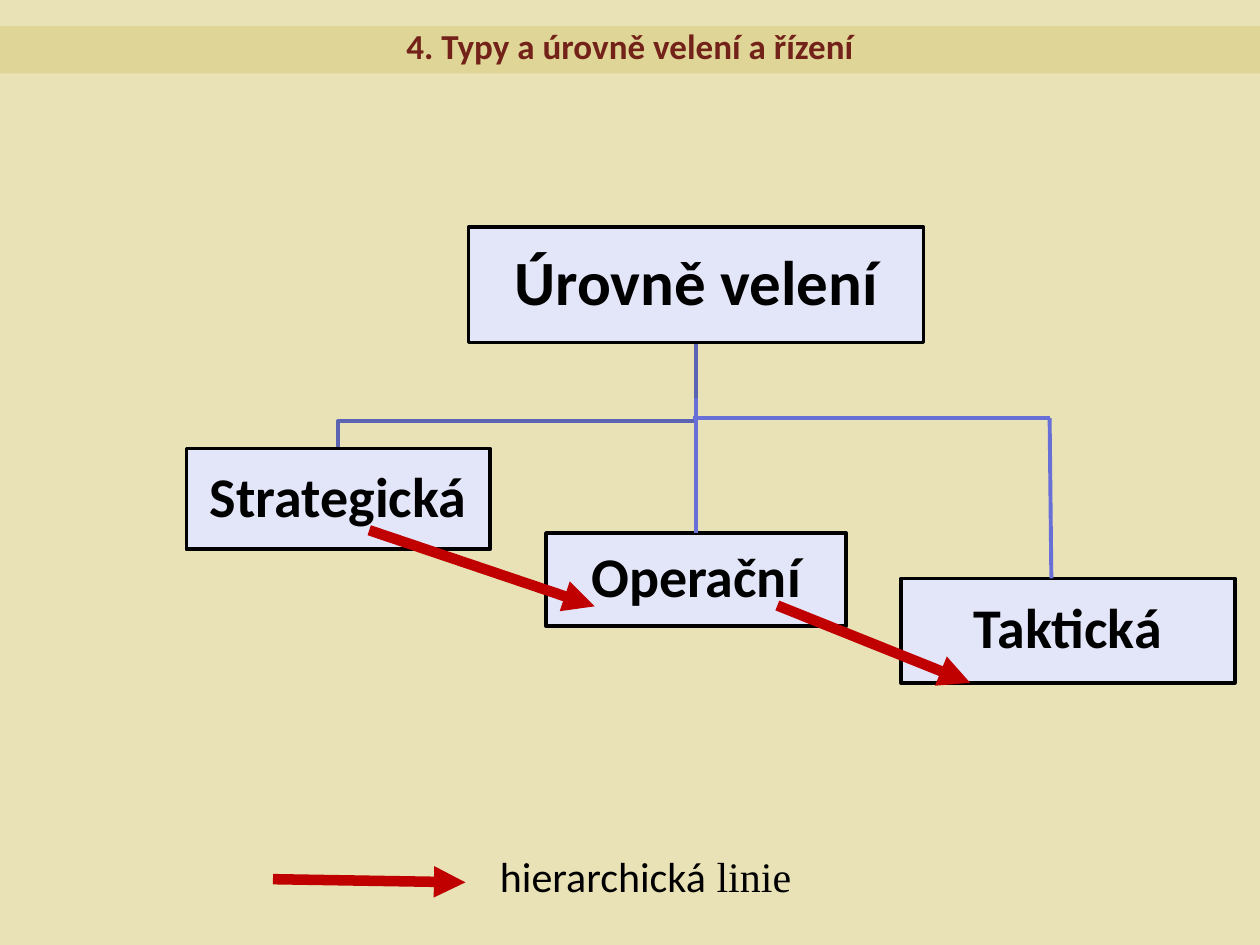
from lxml import etree
from pptx import Presentation
from pptx.dml.color import RGBColor
from pptx.enum.shapes import MSO_CONNECTOR, MSO_SHAPE
from pptx.enum.text import MSO_ANCHOR, PP_ALIGN
from pptx.oxml.ns import qn
from pptx.util import Pt

RECT = MSO_SHAPE.RECTANGLE
LINE = MSO_CONNECTOR.STRAIGHT
MID = MSO_ANCHOR.MIDDLE
CENTER = PP_ALIGN.CENTER

SAND = RGBColor(0xE9, 0xE2, 0xB6)
BAND = RGBColor(0xDF, 0xD5, 0x96)
WINE = RGBColor(0x72, 0x22, 0x19)
PALE = RGBColor(0xE3, 0xE5, 0xF9)
BLACK = RGBColor(0, 0, 0)
SLATE = RGBColor(0x5B, 0x64, 0xB3)
BLUE = RGBColor(0x68, 0x6F, 0xD7)
RED = RGBColor(0xC0, 0, 0)

prs = Presentation()
prs.slide_width, prs.slide_height = Pt(720), Pt(540)
slide = prs.slides.add_slide(prs.slide_layouts[6])
slide.background.fill.solid()
slide.background.fill.fore_color.rgb = SAND
shapes = slide.shapes


def add_box(text, x, y, w, h, fill, size, color, spacing):
    box = shapes.add_shape(RECT, Pt(x), Pt(y), Pt(w), Pt(h))
    box.shadow.inherit = False
    box.fill.solid()
    box.fill.fore_color.rgb = fill
    box.line.fill.background()
    frame = box.text_frame
    frame.text = text
    frame.word_wrap = True
    frame.vertical_anchor = MID
    para = frame.paragraphs[0]
    para.alignment = CENTER
    para.line_spacing = spacing
    font = para.runs[0].font
    font.name, font.size, font.bold = "Calibri", Pt(size), True
    font.color.rgb = color
    return box


def add_line(x1, y1, x2, y2, color, width, arrow=False):
    line = shapes.add_connector(LINE, Pt(x1), Pt(y1), Pt(x2), Pt(y2))
    line.line.color.rgb = color
    line.line.width = Pt(width)
    if arrow:
        etree.SubElement(line.line._get_or_add_ln(), qn("a:tailEnd"), type="triangle")
    etree.SubElement(line._element.spPr, qn("a:effectLst"))
    return line


# Heading band
band = add_box("4. Typy a úrovně velení a řízení", 0, 15, 720, 27, BAND, 20, WINE, 0.8)
band.text_frame.vertical_anchor = MSO_ANCHOR.TOP

# Elbow from the top box to the strategic level
elbow = shapes.build_freeform(Pt(397.8), Pt(195.8))
elbow.add_line_segments(
    [(Pt(397.8), Pt(240.5)), (Pt(193.3), Pt(240.5)), (Pt(193.3), Pt(256.3))], close=False)
bend = elbow.convert_to_shape()
bend.shadow.inherit = False
bend.fill.background()
bend.line.color.rgb = SLATE
bend.line.width = Pt(2)

# Boxes of the hierarchy
levels = [
    ("Úrovně velení", 267.8, 129.6, 260, 66.2, 36),
    ("Strategická", 106.5, 256.3, 173.6, 57.6, 32),
    ("Operační", 312, 304.6, 171.6, 53.3, 32),
    ("Taktická", 514.8, 330.5, 190.8, 59.8, 32),
]
boxes = {}
for name, x, y, w, h, size in levels:
    box = add_box(name, x, y, w, h, PALE, size, BLACK, 0.9)
    box.line.color.rgb = BLACK
    box.line.width = Pt(2)
    frame = box.text_frame
    frame.margin_left = frame.margin_right = Pt(1.5)
    frame.margin_top = frame.margin_bottom = Pt(1.5)
    boxes[name] = box

# Branches to the lower levels
stem = add_line(397.8, 227.5, 397.8, 304.6, BLUE, 2.25)
stem.end_connect(boxes["Operační"], 0)
add_line(396.3, 239, 599.8, 239, BLUE, 2.25)
add_line(599.8, 239, 600.8, 330.5, BLUE, 2.25)

# Hierarchy arrows, the last one for the legend
for ends in [(211, 303, 339.8, 346.5), (444.2, 346, 554.4, 390.2), (156, 502.4, 266, 504.2)]:
    add_line(*ends, RED, 6, arrow=True)

# Legend text
legend = shapes.add_textbox(Pt(278.6), Pt(482.4), Pt(234.7), Pt(36)).text_frame
legend.word_wrap = True
para = legend.paragraphs[0]
for text, face in [("hierarchická", "Calibri"), (" linie", "Times New Roman")]:
    run = para.add_run()
    run.text = text
    run.font.name, run.font.size = face, Pt(24)
    run.font.color.rgb = BLACK

prs.save("out.pptx")
